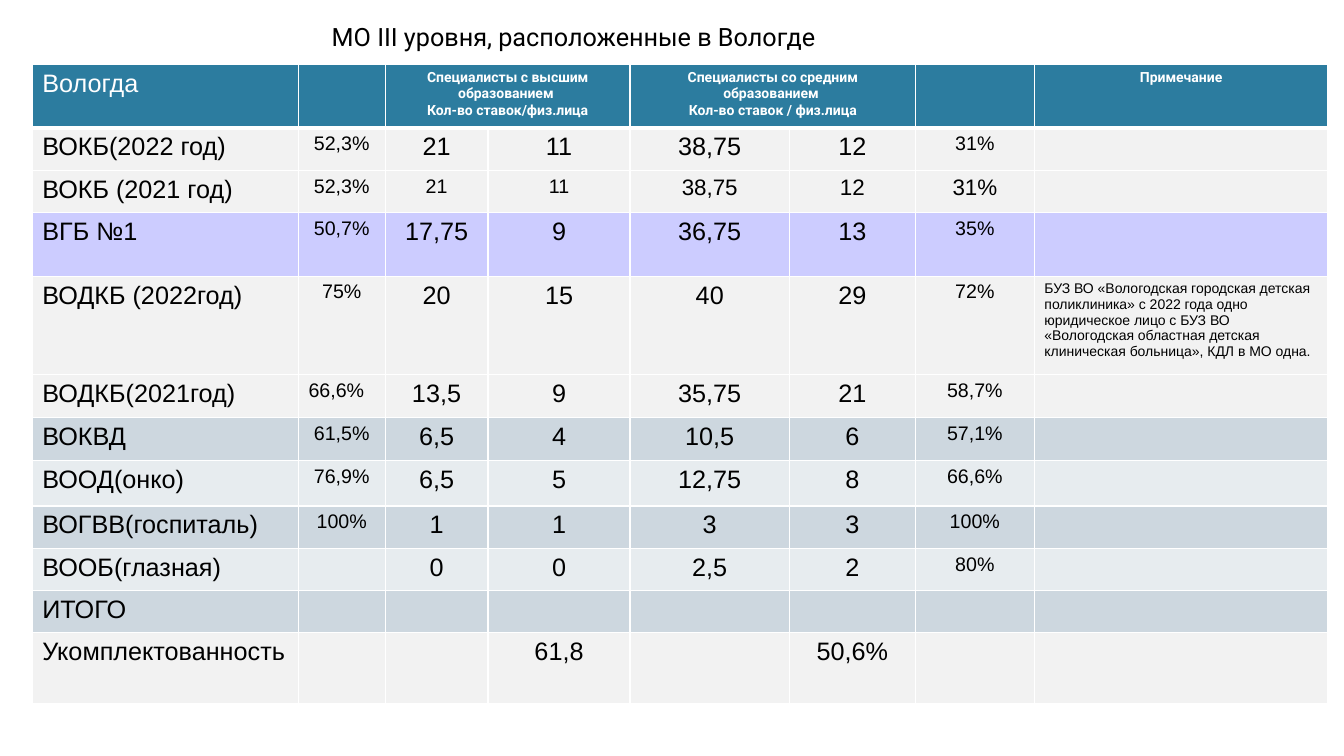
from dataclasses import dataclass

from lxml.etree import SubElement
from pptx import Presentation
from pptx.dml.color import RGBColor
from pptx.enum.text import MSO_ANCHOR, MSO_AUTO_SIZE, PP_ALIGN
from pptx.oxml.ns import qn
from pptx.slide import Slide
from pptx.table import Table, _Cell
from pptx.util import Inches, Pt


@dataclass(frozen=True)
class Theme:
    header: str = "2C7C9F"
    plain: str = "F2F2F2"
    accent: str = "CCCCFF"
    dark: str = "CDD7DF"
    light: str = "E7ECEF"
    black: str = "000000"
    white: str = "FFFFFF"
    body_font: str = "Arial"
    head_font: str = "Roboto"
    large: int = 18
    medium: int = 16
    small: int = 14
    note: int = 10
    thin: float = 0.96
    thick: float = 3


T = Theme()
COLUMN_SIZES = (T.large, T.small) + (T.large,) * 4 + (T.small, T.note)
MIXED_SIZES = (T.large,) + (T.small,) * 3 + (T.medium,) * 3 + (T.note,)
COLUMN_WIDTHS = (2.64, 0.86, 1.02, 1.41, 1.58, 1.25, 1.18, 2.91)
LEFT_ALIGNED_COLUMNS = (0, 7)
MERGED_HEADERS = (2, 4)


@dataclass(frozen=True)
class Row:
    height: float
    fill: str
    texts: tuple[str, ...]
    sizes: tuple[int, ...] = COLUMN_SIZES
    left: tuple[int, ...] = LEFT_ALIGNED_COLUMNS
    is_header: bool = False


NOTE = ("БУЗ ВО «Вологодская городская детская поликлиника» с 2022 года одно "
        "юридическое лицо с БУЗ ВО «Вологодская областная детская клиническая "
        "больница», КДЛ в МО одна.")
ROWS = (
    Row(0.63, T.header,
        ("Вологда", "", "Специалисты с высшим образованием \nКол-во ставок/физ.лица", "",
         "Специалисты со средним образованием \nКол-во ставок / физ.лица", "", "",
         "Примечание"),
        sizes=(T.large,) + (T.note,) * 7, left=(0,), is_header=True),
    Row(0.42, T.plain, ("ВОКБ(2022 год)", "52,3%", "21", "11", "38,75", "12", "31%", "")),
    Row(0.42, T.plain, ("ВОКБ (2021 год)", "52,3%", "21", "11", "38,75", "12", "31%", ""),
        sizes=MIXED_SIZES),
    Row(0.63, T.accent, ("ВГБ №1", "50,7%", "17,75", "9", "36,75", "13", "35%", "")),
    Row(0.98, T.plain, ("ВОДКБ (2022год)", "75%", "20", "15", "40", "29", "72%", NOTE)),
    Row(0.42, T.plain, ("ВОДКБ(2021год)", "66,6%", "13,5", "9", "35,75", "21", "58,7%", ""),
        left=(0, 1, 7)),
    Row(0.43, T.dark, ("ВОКВД", "61,5%", "6,5", "4", "10,5", "6", "57,1%", "")),
    Row(0.45, T.light, ("ВООД(онко)", "76,9%", "6,5", "5", "12,75", "8", "66,6%", "")),
    Row(0.42, T.dark, ("ВОГВВ(госпиталь)", "100%", "1", "1", "3", "3", "100%", "")),
    Row(0.42, T.light, ("ВООБ(глазная)", "", "0", "0", "2,5", "2", "80%", "")),
    Row(0.42, T.dark, ("ИТОГО",) + ("",) * 7),
    Row(0.7, T.plain, ("Укомплектованность", "", "", "61,8", "", "50,6%", "", "")),
)


def set_borders(cell: _Cell, top: float, bottom: float) -> None:
    tcPr = cell._tc.get_or_add_tcPr()
    widths = {"a:lnL": T.thin, "a:lnR": T.thin, "a:lnT": top, "a:lnB": bottom}
    for tag, width in widths.items():
        ln = SubElement(tcPr, qn(tag), w=str(Pt(width)))
        SubElement(SubElement(ln, qn("a:solidFill")), qn("a:srgbClr"), val=T.white)


def write_cell(cell: _Cell, row: Row, column: int) -> None:
    is_heading = row.is_header and column > 0
    font_format = {
        "size": Pt(row.sizes[column]),
        "name": T.head_font if is_heading else T.body_font,
        "bold": is_heading,
    }
    cell.text = row.texts[column]
    for p in cell.text_frame.paragraphs:
        p.alignment = PP_ALIGN.LEFT if column in row.left else PP_ALIGN.CENTER
        for key, value in font_format.items():
            setattr(p.font, key, value)
        for r in p.runs:
            for key, value in font_format.items():
                setattr(r.font, key, value)
            r.font.color.rgb = RGBColor.from_string(T.white if row.is_header else T.black)


def fill_table(table: Table) -> None:
    for column, width in zip(table.columns, COLUMN_WIDTHS):
        column.width = Inches(width)
    for i, row in enumerate(ROWS):
        table.rows[i].height = Inches(row.height)
        for j in range(len(COLUMN_WIDTHS)):
            cell = table.cell(i, j)
            write_cell(cell, row, j)
            set_borders(cell, T.thick if i == 1 else T.thin,
                        T.thick if row.is_header else T.thin)
            cell.fill.solid()
            cell.fill.fore_color.rgb = RGBColor.from_string(row.fill)
    for j in MERGED_HEADERS:
        table.cell(0, j).merge(table.cell(0, j + 1))


def add_title(s: Slide, text: str) -> None:
    sp = s.shapes.title
    sp.left, sp.top, sp.width, sp.height = map(Inches, (3.19, 0.16, 5.04, 0.4))
    tf = sp.text_frame
    tf.text = text
    frame_format = {
        "word_wrap": False, "auto_size": MSO_AUTO_SIZE.NONE,
        "vertical_anchor": MSO_ANCHOR.TOP,
        "margin_left": Inches(0.1), "margin_right": Inches(0.1),
        "margin_top": Inches(0.05), "margin_bottom": Inches(0.05),
    }
    for key, value in frame_format.items():
        setattr(tf, key, value)
    p = tf.paragraphs[0]
    p.alignment = PP_ALIGN.LEFT
    font = p.runs[0].font
    for key, value in {"size": Pt(T.large), "name": T.head_font, "bold": False}.items():
        setattr(font, key, value)
    font.color.rgb = RGBColor.from_string(T.black)


def main() -> None:
    prs = Presentation()
    prs.slide_width, prs.slide_height = Inches(13.33), Inches(7.5)
    s = prs.slides.add_slide(prs.slide_layouts.get_by_name("Title Only"))
    add_title(s, "МО III уровня, расположенные в Вологде")
    frame = s.shapes.add_table(
        len(ROWS), len(COLUMN_WIDTHS), Inches(0.32), Inches(0.64),
        Inches(sum(COLUMN_WIDTHS)), Inches(sum(row.height for row in ROWS)))
    fill_table(frame.table)
    prs.save("out.pptx")


if __name__ == "__main__":
    main()
